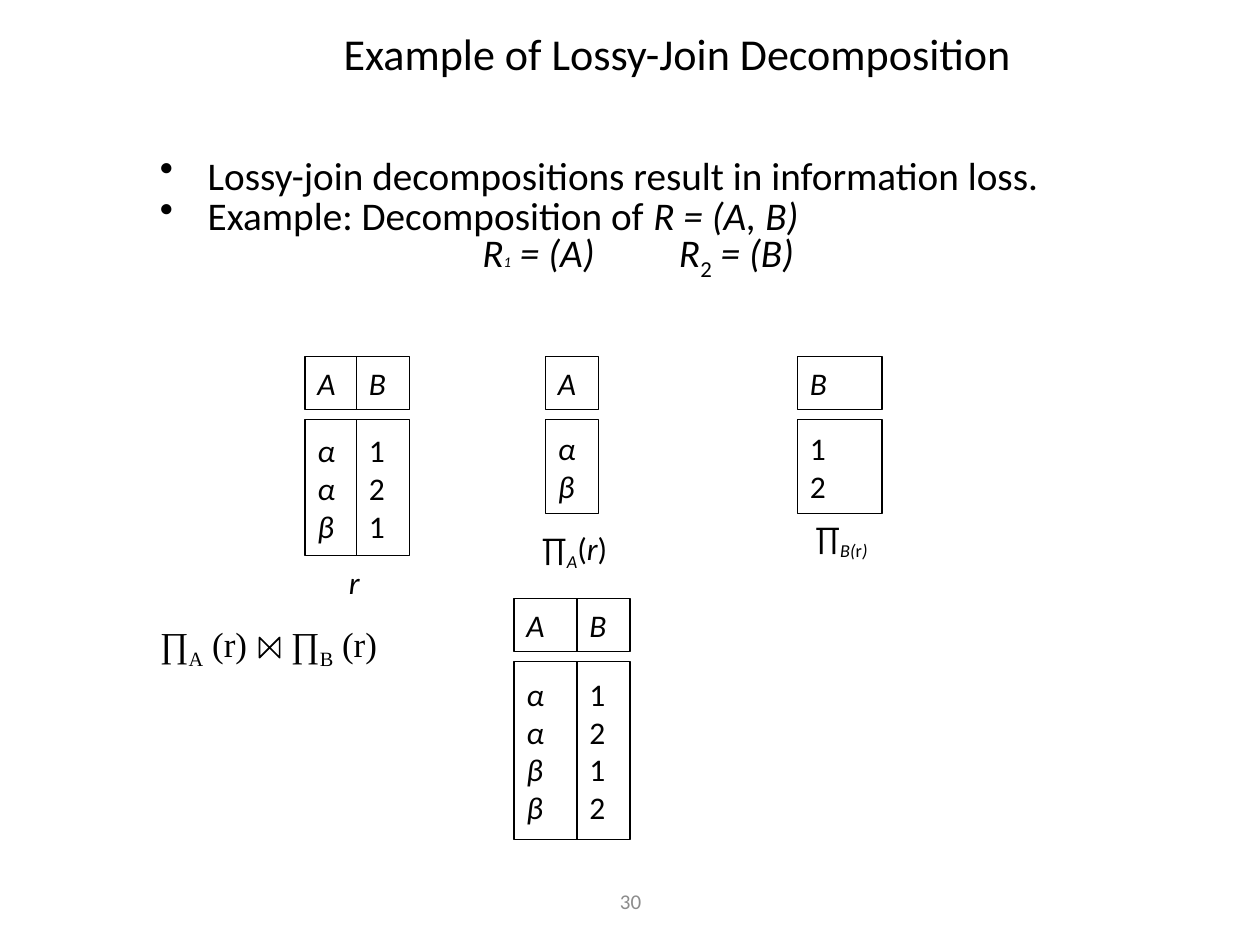
"""Build a slide showing a lossy-join decomposition with its relations."""
from lxml.etree import SubElement
from pptx import Presentation
from pptx.dml.color import RGBColor
from pptx.enum.shapes import MSO_SHAPE
from pptx.enum.text import MSO_ANCHOR, PP_ALIGN
from pptx.oxml.ns import qn
from pptx.util import Inches, Pt

BLACK = RGBColor(0x00, 0x00, 0x00)
WHITE = RGBColor(0xFF, 0xFF, 0xFF)
GRAY = RGBColor(0x8C, 0x8C, 0x8C)
ITALIC = {"italic": True}
SUB = {"sub": True}
ITALIC_SUB = {"italic": True, "sub": True}


def write(shape, paragraphs, size=18, font="Calibri", color=BLACK, italic=False,
          align=PP_ALIGN.LEFT, anchor=MSO_ANCHOR.MIDDLE, wrap=False,
          line_spacing=None, space_before=0, hanging=0, tabs=()):
    frame = shape.text_frame
    frame.word_wrap = wrap
    frame.vertical_anchor = anchor
    for index, pieces in enumerate(paragraphs):
        paragraph = frame.add_paragraph() if index else frame.paragraphs[0]
        paragraph.alignment = align
        paragraph.line_spacing = line_spacing
        paragraph.space_before = Pt(space_before)
        properties = paragraph._p.get_or_add_pPr()
        if hanging:
            properties.set("marL", str(Inches(hanging)))
            properties.set("indent", str(-Inches(hanging)))
            SubElement(properties, qn("a:buChar"), char="•")
        if tabs:
            stops = SubElement(properties, qn("a:tabLst"))
            for stop in tabs:
                SubElement(stops, qn("a:tab"), pos=str(Inches(stop)), algn="l")
        for text, style in pieces:
            if text == "\n":
                paragraph.add_line_break()
                continue
            run = paragraph.add_run()
            run.text = text
            run.font.size = Pt(style.get("size", size))
            run.font.name = font
            run.font.color.rgb = color
            run.font.italic = style.get("italic", italic)
            if style.get("sub"):
                run._r.get_or_add_rPr().set("baseline", "-25000")


prs = Presentation()
prs.slide_width = Inches(10)
prs.slide_height = Inches(7.5)
slide = prs.slides.add_slide(prs.slide_layouts[6])
shapes = slide.shapes

page_number = shapes.add_textbox(Inches(3.42), Inches(6.95), Inches(3.17), Inches(0.4))
write(page_number, [[("30", {})]], size=12, color=GRAY, align=PP_ALIGN.CENTER, wrap=True)

title = shapes.add_textbox(Inches(0.75), Inches(0.17), Inches(9.33), Inches(0.5))
write(title, [[("Example of Lossy-Join Decomposition ", {})]], size=25.2,
      align=PP_ALIGN.CENTER, wrap=True)

explanation = shapes.add_textbox(Inches(1.17), Inches(1.25), Inches(7.35), Inches(1.15))
write(explanation, [
    [("Lossy-join decompositions result in information loss.", {})],
    [("Example: Decomposition of ", {}), ("R = (A, B)", ITALIC), ("\n", {}),
     ("\tR", ITALIC), ("1", {"italic": True, "size": 8.4}), (" = (A)\tR", ITALIC),
     ("2", SUB), (" = (B)", ITALIC)],
], size=22.4, anchor=MSO_ANCHOR.TOP, wrap=True, line_spacing=0.7, space_before=4.5,
    hanging=0.38, tabs=(2.56, 4.12))

relation_columns = [
    (2.42, 2.83, 0.42, "A", "ααβ"),
    (2.83, 2.83, 0.42, "B", "121"),
    (4.33, 2.83, 0.42, "A", "αβ"),
    (6.33, 2.83, 0.67, "B", "12"),
    (4.08, 4.75, 0.5, "A", "ααββ"),
    (4.58, 4.75, 0.42, "B", "1212"),
]
for left, top, width, attribute, values in relation_columns:
    values_height = len(values) / 3 + 0.08
    for cell_top, height, entries, italic in (
        (top, 0.42, attribute, True),
        (top + 0.5, values_height, values, attribute == "A"),
    ):
        cell = shapes.add_shape(MSO_SHAPE.RECTANGLE, Inches(left), Inches(cell_top),
                                Inches(width), Inches(height))
        cell.shadow.inherit = False
        cell.fill.solid()
        cell.fill.fore_color.rgb = WHITE
        cell.line.color.rgb = BLACK
        cell.line.width = Pt(0.75)
        write(cell, [[(entry, {})] for entry in entries], italic=italic)

relation_labels = [
    (2.67, 4.42, 0.28, [("r", ITALIC)]),
    (4.2, 4.17, 0.77, [("∏", {}), ("A", ITALIC_SUB), ("(", {}), ("r", ITALIC), (")", {})]),
    (6.37, 4.08, 0.69, [("∏", {}), ("B(", ITALIC_SUB), ("r", SUB), (")", ITALIC_SUB)]),
]
for left, top, width, pieces in relation_labels:
    label = shapes.add_textbox(Inches(left), Inches(top), Inches(width), Inches(0.4))
    write(label, [pieces])

join_expression = shapes.add_textbox(Inches(1.17), Inches(4.89), Inches(2.75), Inches(0.95))
write(join_expression,
      [[("∏", {}), ("A", SUB), (" (r)\t∏", {}), ("B", SUB), (" (r)", {})]],
      size=20, font="Times New Roman", anchor=MSO_ANCHOR.TOP, wrap=True, tabs=(1.04,))

join_left, join_top, join_side = Inches(2.06), Inches(5.06), Inches(0.16)
join_right, join_bottom = join_left + join_side, join_top + join_side
outline = shapes.build_freeform(join_left, join_top)
outline.add_line_segments([(join_left, join_bottom), (join_right, join_top),
                           (join_right, join_bottom)], close=True)
join_symbol = outline.convert_to_shape()
join_symbol.shadow.inherit = False
join_symbol.fill.background()
join_symbol.line.color.rgb = BLACK
join_symbol.line.width = Pt(1)

prs.save("out.pptx")
